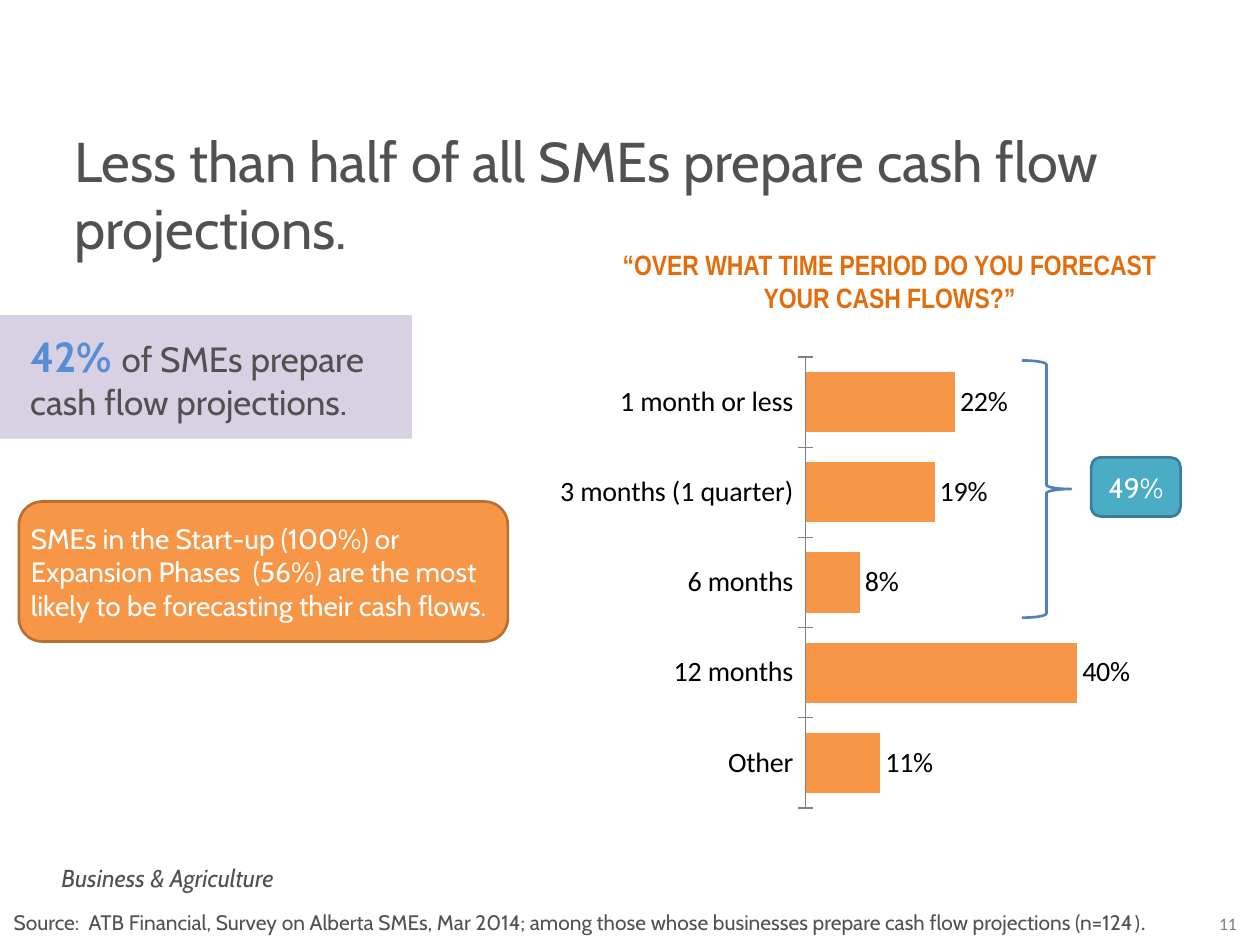
from lxml import etree
from pptx import Presentation, util as u
from pptx.chart.data import CategoryChartData
from pptx.dml.color import RGBColor
from pptx.enum import chart as ch, shapes, text
from pptx.oxml import parse_xml
from pptx.oxml.ns import nsdecls, qn

COLORS = {
    "ink": "505150", "grey": "808080", "black": "000000", "white": "FFFFFF",
    "blue": "558ED5", "brace": "4F81BD", "lilac": "CCC1DA",
    "orange": "F79646", "orange_line": "B76F34", "heading": "E46C0A",
    "teal": "4BACC6", "teal_line": "377F92",
}
SHAPE = shapes.MSO_SHAPE
LEFT, CENTER = text.PP_ALIGN.LEFT, text.PP_ALIGN.CENTER
MIDDLE, TOP = text.MSO_ANCHOR.MIDDLE, text.MSO_ANCHOR.TOP
INSETS = (7.2, 3.6, 7.2, 3.6)


def rgb(name):
    return RGBColor.from_string(COLORS[name])


class Deck:
    font = "Cabin"

    def __init__(self, width, height):
        self.prs = Presentation()
        self.prs.slide_width, self.prs.slide_height = u.Pt(width), u.Pt(height)
        self.s = self.prs.slides.add_slide(self.prs.slide_layouts[5])

    def style(self, font, size, color, name=None, bold=False, italic=False):
        font.name, font.size = name or self.font, u.Pt(size)
        font.bold, font.italic = bold, italic
        font.color.rgb = rgb(color)

    def set_text(self, sp, runs, size, color, align=LEFT, anchor=TOP, insets=INSETS, **kw):
        tf = sp.text_frame
        tf.word_wrap, tf.auto_size = True, text.MSO_AUTO_SIZE.NONE
        tf.vertical_anchor = anchor
        tf.margin_left, tf.margin_top, tf.margin_right, tf.margin_bottom = map(u.Pt, insets)
        p = tf.paragraphs[0]
        p.alignment = align
        for words in runs:
            p.add_run().text = words
        self.style(p.font, size, color, **kw)
        return p

    def title(self, box, words, size, color):
        sp = self.s.shapes.title
        sp.left, sp.top, sp.width, sp.height = map(u.Pt, box)
        self.set_text(sp, [words], size, color)

    def label(self, box, runs, size, color, **kw):
        sp = self.s.shapes.add_textbox(*map(u.Pt, box))
        return self.set_text(sp, runs, size, color, **kw)

    def shape(self, kind, box, fill=None, line=None, alpha=None):
        sp = self.s.shapes.add_shape(kind, *map(u.Pt, box))
        sp.shadow.inherit = False
        if fill:
            sp.fill.solid()
            sp.fill.fore_color.rgb = rgb(fill)
        else:
            sp.fill.background()
        if alpha:
            color = sp.element.spPr.find(".//" + qn("a:srgbClr"))
            etree.SubElement(color, qn("a:alpha"), val=str(alpha * 1000))
        if line:
            sp.line.color.rgb, sp.line.width = rgb(line), u.Pt(1.5)
        else:
            sp.line.fill.background()
        return sp

    def bar_chart(self, box, values, plot):
        data = CategoryChartData(number_format="0%")
        data.categories = list(values)
        data.add_series("Series 1", list(values.values()))
        chart = self.s.shapes.add_chart(
            ch.XL_CHART_TYPE.BAR_CLUSTERED, *map(u.Pt, box), data).chart
        chart.has_legend = chart.has_title = False
        self.style(chart.font, 18, "black")
        cat, val = chart.category_axis, chart.value_axis
        cat.major_tick_mark = ch.XL_TICK_MARK.CROSS
        cat.format.line.color.rgb = rgb("grey")
        self.style(cat.tick_labels.font, 16, "black", name="Calibri")
        val.minimum_scale, val.maximum_scale = 0, 0.6
        val.has_major_gridlines = val.visible = False
        bars = chart.plots[0]
        bars.gap_width, bars.vary_by_categories = 50, False
        fill = bars.series[0].format.fill
        fill.solid()
        fill.fore_color.rgb = rgb("orange")
        bars.has_data_labels = True
        labels = bars.data_labels
        labels.show_value = True
        labels.position = ch.XL_LABEL_POSITION.OUTSIDE_END
        labels.number_format, labels.number_format_is_linked = "0%", False
        self.style(labels.font, 16, "black", name="Calibri")
        area = chart.element.find(".//" + qn("c:plotArea"))
        for old in area.findall(qn("c:layout")):
            area.remove(old)
        parts = "".join(f'<c:{k}Mode val="edge"/>' for k in "xy")
        parts += "".join(f'<c:{k} val="{v}"/>' for k, v in zip("xywh", plot))
        area.insert(0, parse_xml(
            f'<c:layout {nsdecls("c")}><c:manualLayout><c:layoutTarget val="inner"/>'
            f'{parts}</c:manualLayout></c:layout>'))


def main():
    d = Deck(720, 540)
    d.label((684, 518.4, 35.3, 19.4), ["11"], 10, "grey", align=CENTER, name="Calibri")
    d.label((28, 489.6, 202, 24.5), ["Business & Agriculture"], 14, "ink", italic=True)
    d.title((35.3, 68.4, 636, 85),
            "Less than half of all SMEs prepare cash flow projections.", 32, "ink")

    banner = d.shape(SHAPE.RECTANGLE, (0, 180, 235.4, 70.6), "lilac", alpha=75)
    p = d.set_text(banner, ["42% ", "of SMEs prepare cash flow projections."], 20, "ink",
                   anchor=MIDDLE, insets=(17.3, 8.6, 14.4, 8.6))
    p.space_after = u.Pt(12)
    d.style(p.runs[0].font, 24, "blue", bold=True)

    d.bar_chart((245.5, 195.8, 447.8, 274.3),
                {"Other": 0.11, "12 months": 0.4, "6 months": 0.08,
                 "3 months (1 quarter)": 0.19, "1 month or less": 0.22},
                (0.48, 0.03, 0.52, 0.94))

    question = d.shape(SHAPE.ROUNDED_RECTANGULAR_CALLOUT, (341.3, 140.4, 334, 40.3))
    d.set_text(question, ["“OVER WHAT TIME PERIOD DO YOU FORECAST YOUR CASH FLOWS?”"], 16,
               "heading", align=CENTER, anchor=MIDDLE, name="Arial Narrow", bold=True)

    p = d.label((0.7, 516.2, 670.3, 21.6),
                ["Source:  ATB Financial, Survey on Alberta SMEs, Mar 2014; among those whose "
                 "businesses prepare cash flow projections (n=124", ")."], 12, "ink")
    p.runs[1].font.name = "Calibri"

    total = d.shape(SHAPE.ROUNDED_RECTANGLE, (623.5, 261.4, 51.1, 33.8), "teal", "teal_line")
    d.set_text(total, ["49%"], 16, "white", align=CENTER, anchor=MIDDLE)
    d.shape(SHAPE.RIGHT_BRACE, (584, 206, 28, 147), line="brace")

    phases = d.shape(SHAPE.ROUNDED_RECTANGLE, (10.8, 286.6, 279.4, 80), "orange", "orange_line")
    d.set_text(phases, ["SMEs in the Start-up (100%) or Expansion Phases  (56%) are the most "
                        "likely to be forecasting their cash flows."], 16, "white",
               anchor=MIDDLE, insets=(2.9,) * 4)
    d.prs.save("out.pptx")


if __name__ == "__main__":
    main()
